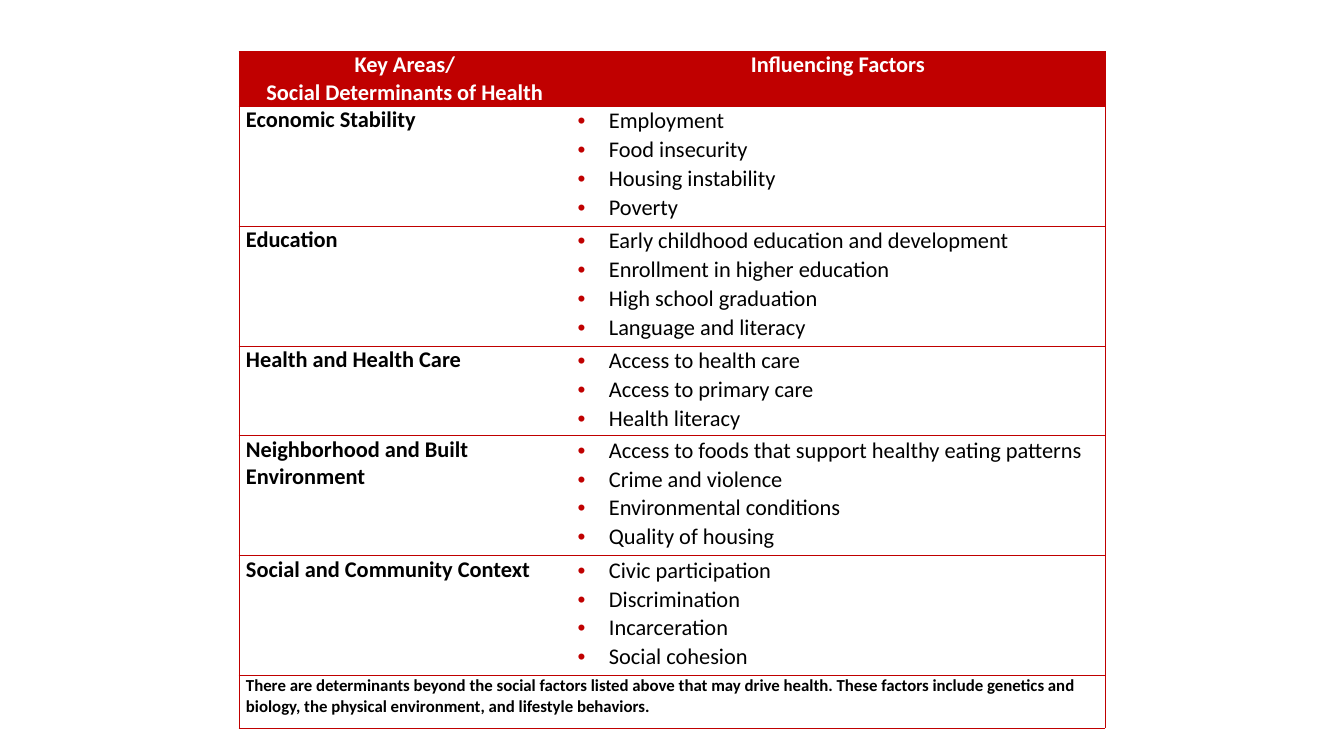
from dataclasses import dataclass

from lxml import etree
from pptx import Presentation
from pptx.dml.color import RGBColor
from pptx.enum.text import MSO_ANCHOR, PP_ALIGN
from pptx.oxml.ns import qn
from pptx.table import _Cell
from pptx.util import Inches, Pt

CENTER, LEFT = PP_ALIGN.CENTER, PP_ALIGN.LEFT
TOP = MSO_ANCHOR.TOP
COLORS = {"red": "C00000", "white": "FFFFFF", "black": "000000"}
FONT = "Calibri"
BORDER_WIDTH = Pt(0.5)
BULLET_INDENT = Inches(0.31)
BULLET_TAB = Inches(0.24)
COLUMN_WIDTHS = (3.29, 5.3)
HEADER_HEIGHT, FOOTNOTE_HEIGHT = 0.54, 0.52


@dataclass
class KeyArea:
    name: str
    factors: list[str]
    height: float = 1.19


HEADINGS = (["Key Areas/", "Social Determinants of Health"], ["Influencing Factors"])
KEY_AREAS = [
    KeyArea("Economic Stability",
            ["Employment", "Food insecurity", "Housing instability", "Poverty"]),
    KeyArea("Education",
            ["Early childhood education and development", "Enrollment in higher education",
             "High school graduation", "Language and literacy"]),
    KeyArea("Health and Health Care",
            ["Access to health care", "Access to primary care", "Health literacy"], 0.89),
    KeyArea("Neighborhood and Built Environment",
            ["Access to foods that support healthy eating patterns", "Crime and violence",
             "Environmental conditions", "Quality of housing"]),
    KeyArea("Social and Community Context",
            ["Civic participation", "Discrimination", "Incarceration", "Social cohesion"]),
]
FOOTNOTE = ("There are determinants beyond the social factors listed above that may drive health. "
            "These factors include genetics and biology, the physical environment, "
            "and lifestyle behaviors.")


def add_bullet(paragraph) -> None:
    paragraph.line_spacing = 1.05
    properties = paragraph._p.get_or_add_pPr()
    properties.set("marL", str(BULLET_INDENT))
    properties.set("indent", str(-BULLET_INDENT))
    bullet_color = etree.SubElement(properties, qn("a:buClr"))
    etree.SubElement(bullet_color, qn("a:srgbClr"), val=COLORS["red"])
    etree.SubElement(properties, qn("a:buFont"), typeface="Arial")
    etree.SubElement(properties, qn("a:buChar"), char="•")
    tabs = etree.SubElement(properties, qn("a:tabLst"))
    etree.SubElement(tabs, qn("a:tab"), pos=str(BULLET_TAB), algn="l")


def write_text(cell: _Cell, lines: list[str], *, size: float = 16, color: str = "black",
               bold: bool = True, align: PP_ALIGN = LEFT, bulleted: bool = False) -> None:
    frame = cell.text_frame
    for index, line in enumerate(lines):
        paragraph = frame.add_paragraph() if index else frame.paragraphs[0]
        paragraph.alignment = align
        run = paragraph.add_run()
        run.text = line
        run.font.name = FONT
        run.font.size = Pt(size)
        run.font.bold = bold
        run.font.color.rgb = RGBColor.from_string(COLORS[color])
        if bulleted:
            add_bullet(paragraph)


def style_cell(cell: _Cell, fill: str, visible_sides: str) -> None:
    """Set margins, fill and borders; visible_sides holds letters from LRTB."""
    cell.margin_left = cell.margin_right = Inches(0.07)
    cell.margin_top = cell.margin_bottom = 0
    cell.vertical_anchor = TOP
    cell.fill.solid()
    cell.fill.fore_color.rgb = RGBColor.from_string(COLORS[fill])
    properties = cell._tc.get_or_add_tcPr()
    for index, side in enumerate("LRTB"):
        line = etree.Element(qn(f"a:ln{side}"), w=str(BORDER_WIDTH))
        if side in visible_sides:
            line_fill = etree.SubElement(line, qn("a:solidFill"))
            etree.SubElement(line_fill, qn("a:srgbClr"), val=COLORS["red"])
        else:
            etree.SubElement(line, qn("a:noFill"))
        properties.insert(index, line)


def build_table(slide) -> None:
    heights = [HEADER_HEIGHT, *(area.height for area in KEY_AREAS), FOOTNOTE_HEIGHT]
    table = slide.shapes.add_table(
        len(heights), len(COLUMN_WIDTHS), Inches(2.37), Inches(0.51),
        Inches(sum(COLUMN_WIDTHS)), Inches(sum(heights))).table
    table.first_row = table.horz_banding = False
    for column, width in zip(table.columns, COLUMN_WIDTHS):
        column.width = Inches(width)

    footnote_row = len(heights) - 1
    for row_index, height in enumerate(heights):
        table.rows[row_index].height = Inches(height)
        fill = "white" if row_index else "red"
        for column_index, outer_side in enumerate("LR"):
            sides = "LRTB" if row_index == footnote_row else outer_side + "TB"
            style_cell(table.cell(row_index, column_index), fill, sides)

    for column_index, heading in enumerate(HEADINGS):
        write_text(table.cell(0, column_index), heading, color="white", align=CENTER)
    for row_index, area in enumerate(KEY_AREAS, start=1):
        write_text(table.cell(row_index, 0), [area.name])
        write_text(table.cell(row_index, 1), area.factors, bold=False, bulleted=True)
    footnote = table.cell(footnote_row, 0)
    footnote.merge(table.cell(footnote_row, 1))
    write_text(footnote, [FOOTNOTE], size=12)


def main() -> None:
    presentation = Presentation()
    presentation.slide_width = Inches(13.33)
    presentation.slide_height = Inches(7.5)
    blank_layout = presentation.slide_layouts[6]
    build_table(presentation.slides.add_slide(blank_layout))
    presentation.save("out.pptx")


if __name__ == "__main__":
    main()
